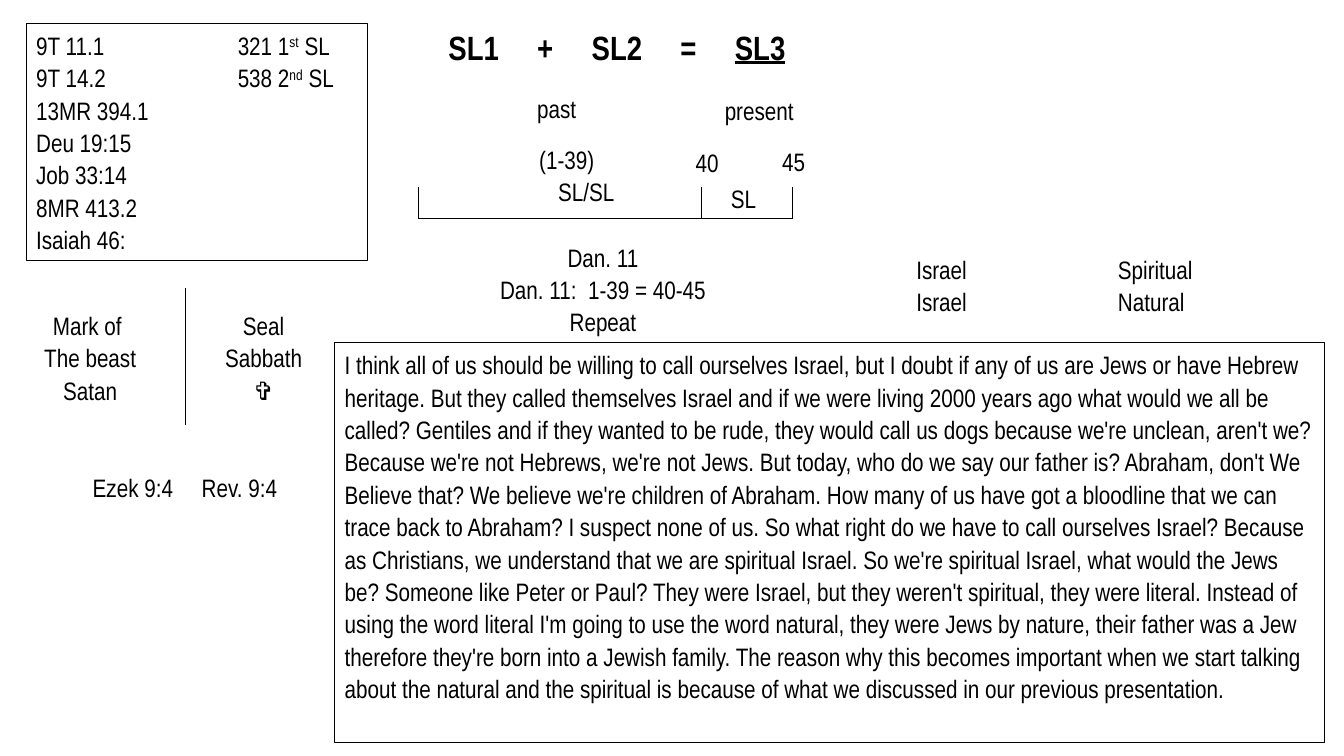
from lxml import etree
from pptx import Presentation
from pptx.dml.color import RGBColor
from pptx.enum.shapes import MSO_CONNECTOR, MSO_SHAPE
from pptx.enum.text import MSO_ANCHOR, PP_ALIGN
from pptx.oxml.ns import qn
from pptx.util import Inches, Pt

RECT = MSO_SHAPE.RECTANGLE
STRAIGHT = MSO_CONNECTOR.STRAIGHT
TOP = MSO_ANCHOR.TOP
LEFT, CENTER = PP_ALIGN.LEFT, PP_ALIGN.CENTER
BLACK, WHITE = "000000", "FFFFFF"

BODY = {"name": "Arial Narrow", "size": Pt(18)}
TITLE = {"name": "Arial Narrow", "size": Pt(24), "bold": True}
RAISED = {"baseline": "30000"}

QUOTE = [
    "I think all of us should be willing to call ourselves Israel, but I doubt if any of us are Jews",
    "or have Hebrew heritage. But they called themselves Israel and if we were living 2000 years ago",
    "what would we all be called? Gentiles and if they wanted to be rude, they would call us dogs",
    "because we're unclean, aren't we? Because we're not Hebrews, we're not Jews. But today, who do",
    "we say our father is? Abraham, don't We Believe that? We believe we're children of Abraham. How",
    "many of us have got a bloodline that we can trace back to Abraham? I suspect none of us. So what",
    "right do we have to call ourselves Israel? Because as Christians, we understand that we are",
    "spiritual Israel. So we're spiritual Israel, what would the Jews be? Someone like Peter or Paul?",
    "They were Israel, but they weren't spiritual, they were literal. Instead of using the word",
    "literal I'm going to use the word natural, they were Jews by nature, their father was a Jew",
    "therefore they're born into a Jewish family. The reason why this becomes important when we start",
    "talking about the natural and the spiritual is because of what we discussed in our previous",
    "presentation.",
]
VERSES = [
    ["9T 11.1\t321 1", ("st", RAISED), " SL"],
    ["9T 14.2\t538 2", ("nd", RAISED), " SL"],
    "13MR 394.1", "Deu 19:15", "Job 33:14", "8MR 413.2", "Isaiah 46:",
]
SUM = [["SL1\t+\tSL2\t=\t", ("SL3", {"underline": True})]]


def color(code):
    return RGBColor.from_string(code)


def set_tabs(para, stops):
    """Add left tab stops, in inches from the text edge."""
    tabs = etree.SubElement(para._p.get_or_add_pPr(), qn("a:tabLst"))
    for stop in stops:
        etree.SubElement(tabs, qn("a:tab"), pos=str(Inches(stop)), algn="l")


def add_run(para, text, form):
    run = para.add_run()
    run.text = text
    run.font.color.rgb = color(BLACK)
    for key, value in form.items():
        if key == "baseline":
            run._r.get_or_add_rPr().set(key, value)
        else:
            setattr(run.font, key, value)


def add_box(slide, place, lines, edge=WHITE, align=LEFT, form=BODY, stops=(), inset=0.1):
    """Add a white box; a line is a string or a list of strings and (text, format) pairs."""
    box = slide.shapes.add_shape(RECT, *map(Inches, place))
    box.shadow.inherit = False
    box.fill.solid()
    box.fill.fore_color.rgb = color(WHITE)
    box.line.color.rgb = color(edge)
    box.line.width = Pt(0.75)
    frame = box.text_frame
    frame.word_wrap = True
    frame.vertical_anchor = TOP
    frame.margin_left = Inches(inset)
    for i, line in enumerate(lines):
        para = frame.add_paragraph() if i else frame.paragraphs[0]
        para.alignment = align
        para.line_spacing = 1.07
        if stops:
            set_tabs(para, stops)
        for part in [line] if isinstance(line, str) else line:
            text, extra = (part, {}) if isinstance(part, str) else part
            add_run(para, text, {**form, **extra})
    return box


def add_line(slide, *ends):
    line = slide.shapes.add_connector(STRAIGHT, *map(Inches, ends))
    line.line.color.rgb = color(BLACK)
    line.line.width = Pt(0.5)
    etree.SubElement(line._element.spPr, qn("a:effectLst"))


def add_span(slide):
    """Draw the time line with its three upright marks."""
    start, split, end, base = 4.15, 6.96, 7.86, 2.17
    add_line(slide, end, base, start, base)
    for x in (start, split, end):
        add_line(slide, x, 1.86, x, base)


def main():
    deck = Presentation()
    deck.slide_width, deck.slide_height = Inches(13.33), Inches(7.5)
    slide = deck.slides.add_slide(deck.slide_layouts[6])

    add_box(slide, (3.32, 3.4, 9.82, 3.97), [" ".join(QUOTE)], BLACK)
    add_box(slide, (0.26, 0.23, 3.39, 2.36), VERSES, BLACK, stops=[2])

    add_box(slide, (0.26, 3.01, 1.27, 1.06), ["Mark of ", "The beast", "Satan"], align=CENTER)
    add_box(slide, (1.98, 3.01, 1.27, 1.06), ["Seal", "Sabbath", "✞"], align=CENTER)
    add_line(slide, 1.84, 2.86, 1.84, 4.22)
    add_box(slide, (0.59, 4.62, 2.5, 0.41), ["Ezek 9:4\tRev. 9:4"], stops=[1.08], inset=0.33)

    add_box(slide, (4.35, 0.19, 3.83, 0.51), SUM, form=TITLE, stops=[0.88, 1.42, 2.3, 2.84])
    add_span(slide)
    add_box(slide, (4.42, 2.33, 3.12, 1.06),
            ["Dan. 11", "Dan. 11:  1-39 = 40-45", "Repeat"], align=CENTER)
    era = add_box(slide, (5.25, 1.36, 1.13, 0.73), ["(1-39)", "SL/SL"])
    era.text_frame.paragraphs[1].alignment = CENTER
    for text, x, y, width in (("SL", 7.15, 1.75, 0.51), ("40", 6.8, 1.39, 0.51),
                              ("45", 7.66, 1.38, 0.51), ("past", 5.23, 0.86, 1.13),
                              ("present", 7.09, 0.88, 1.13)):
        add_box(slide, (x, y, width, 0.41), [text])
    add_box(slide, (8.99, 2.45, 3.87, 0.73), ["Israel\tSpiritual", "Israel\tNatural"], stops=[2])

    deck.save("out.pptx")


if __name__ == "__main__":
    main()
